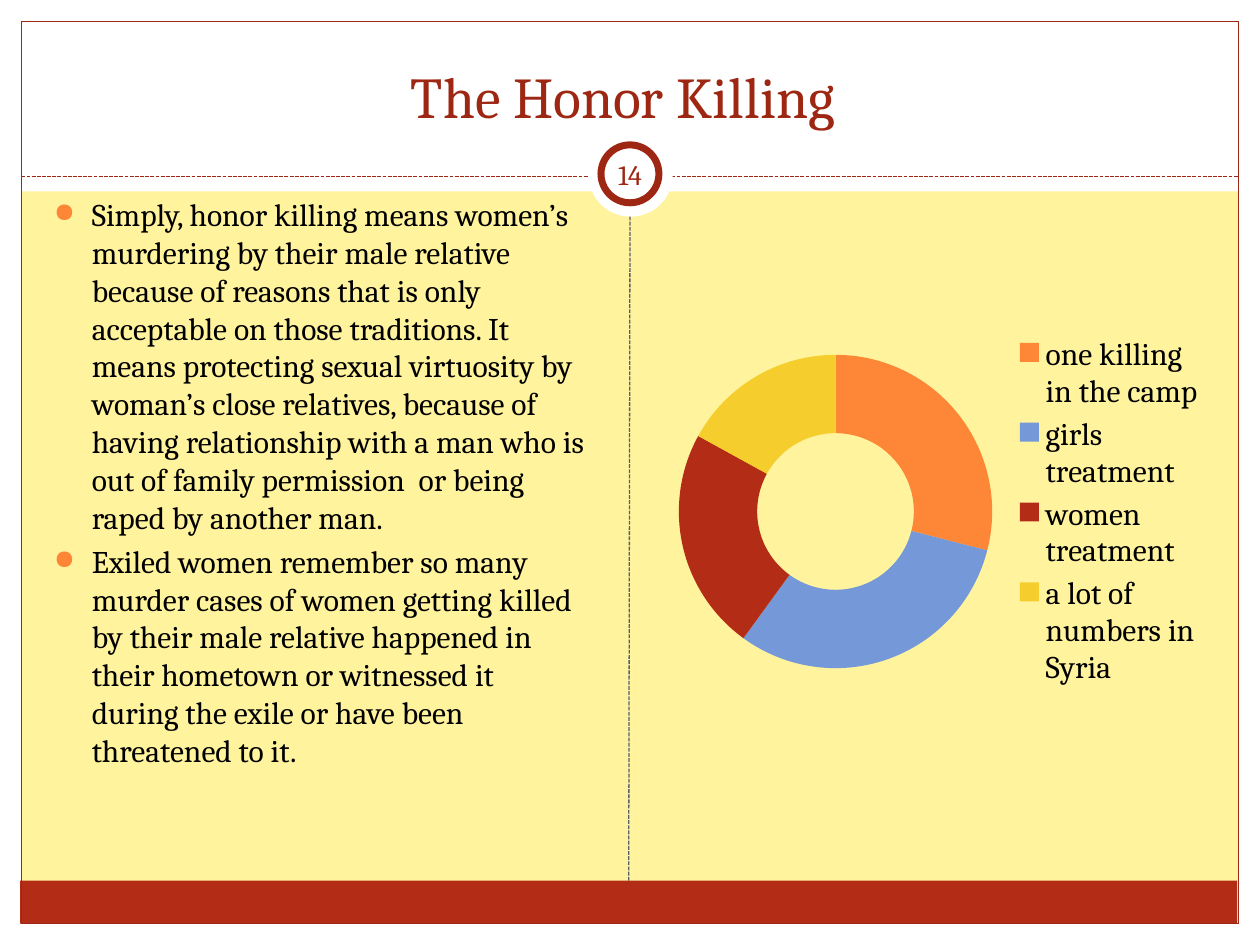
"""Build the slide on honor killing: text on the left, a doughnut chart on the right."""
from lxml.etree import SubElement
from pptx import Presentation
from pptx.chart.data import CategoryChartData
from pptx.dml.color import RGBColor
from pptx.enum.chart import XL_CHART_TYPE, XL_LEGEND_POSITION
from pptx.enum.dml import MSO_LINE
from pptx.enum.shapes import MSO_CONNECTOR, MSO_SHAPE
from pptx.enum.text import MSO_ANCHOR, PP_ALIGN
from pptx.oxml.ns import qn
from pptx.util import Inches, Pt

FONT = "Cambria"
CREAM = RGBColor(0xFF, 0xF3, 0x9D)
WHITE = RGBColor(0xFF, 0xFF, 0xFF)
BLACK = RGBColor(0x00, 0x00, 0x00)
RED = RGBColor(0xB3, 0x2C, 0x16)
DARK_RED = RGBColor(0x9E, 0x27, 0x13)
SLATE = RGBColor(0x57, 0x5F, 0x6D)
ORANGE = RGBColor(0xFE, 0x86, 0x37)
BLUE = RGBColor(0x75, 0x98, 0xD9)
YELLOW = RGBColor(0xF5, 0xCD, 0x2D)

presentation = Presentation()
presentation.slide_width = Inches(10)
presentation.slide_height = Inches(7.5)
slide = presentation.slides.add_slide(presentation.slide_layouts[5])
slide.background.fill.solid()
slide.background.fill.fore_color.rgb = CREAM


def add_panel(preset, left, top, width, height, fill=None, line=None, weight=0.75):
    panel = slide.shapes.add_shape(
        preset, Inches(left), Inches(top), Inches(width), Inches(height))
    panel.shadow.inherit = False
    if fill is None:
        panel.fill.background()
    else:
        panel.fill.solid()
        panel.fill.fore_color.rgb = fill
    if line is None:
        panel.line.fill.background()
    else:
        panel.line.color.rgb = line
        panel.line.width = Pt(weight)
    return panel


def write(holder, paragraphs, size, color, align=PP_ALIGN.LEFT,
          anchor=MSO_ANCHOR.TOP, inset=0.1, bullet=None):
    frame = holder.text_frame
    frame.word_wrap = True
    frame.vertical_anchor = anchor
    frame.margin_left = frame.margin_right = Inches(inset)
    frame.margin_top = frame.margin_bottom = Inches(0.05)
    frame.text = "\n".join(paragraphs)
    for paragraph in frame.paragraphs:
        paragraph.alignment = align
        font = paragraph.runs[0].font
        font.name, font.size, font.color.rgb = FONT, Pt(size), color
        if bullet is not None:
            paragraph.space_before = Pt(size * 0.2)
            properties = paragraph._p.get_or_add_pPr()
            properties.set("marL", str(Inches(0.3)))
            properties.set("indent", str(-Inches(0.3)))
            bullet_color = SubElement(properties, qn("a:buClr"))
            SubElement(bullet_color, qn("a:srgbClr"), val=str(bullet))
            SubElement(properties, qn("a:buSzPct"), val="85000")
            SubElement(properties, qn("a:buChar"), char="●")


for edge in [(0, 7.33, 10, 0.17), (0, 0, 10, 1.52), (0, 0, 0.17, 7.5), (9.83, 0, 0.17, 7.5)]:
    add_panel(MSO_SHAPE.RECTANGLE, *edge, fill=WHITE)
footer_bar = add_panel(MSO_SHAPE.RECTANGLE, 0.16, 6.99, 9.66, 0.34, fill=RED)
add_panel(MSO_SHAPE.RECTANGLE, 0.17, 0.17, 9.66, 7.16, line=DARK_RED)

title_rule = slide.shapes.add_connector(
    MSO_CONNECTOR.STRAIGHT, Inches(0.17), Inches(1.4), Inches(9.83), Inches(1.4))
add_panel(MSO_SHAPE.OVAL, 4.67, 1.05, 0.67, 0.67, fill=WHITE)
add_panel(MSO_SHAPE.OVAL, 4.77, 1.15, 0.46, 0.46, fill=WHITE, line=DARK_RED, weight=4)
column_rule = slide.shapes.add_connector(
    MSO_CONNECTOR.STRAIGHT, Inches(4.99), Inches(6.99), Inches(5), Inches(1.72))
column_rule.begin_connect(footer_bar, 0)
for rule, color in [(title_rule, DARK_RED), (column_rule, SLATE)]:
    rule.line.color.rgb = color
    rule.line.width = Pt(0.75)
    rule.line.dash_style = MSO_LINE.SQUARE_DOT
    SubElement(rule._element.spPr, qn("a:effectLst"))

title = slide.shapes.title
title.left, title.top = Inches(0.33), Inches(0.25)
title.width, title.height = Inches(9.33), Inches(0.83)
slide.shapes._spTree.append(title._element)
write(title, ["The Honor Killing "], size=33, color=DARK_RED,
      align=PP_ALIGN.CENTER, anchor=MSO_ANCHOR.BOTTOM)

explanation = slide.shapes.add_textbox(Inches(0.33), Inches(1.5), Inches(4.42), Inches(5.12))
write(explanation, [
    "Simply, honor killing means women’s murdering by their male relative because of "
    "reasons that is only acceptable on those traditions. It means protecting sexual "
    "virtuosity by woman’s close relatives, because of having relationship with a man "
    "who is out of family permission  or being raped by another man.",
    "Exiled women remember so many murder cases of women getting killed by their male "
    "relative happened in their hometown or witnessed it during the exile or have been "
    "threatened to it.",
], size=18, color=BLACK, bullet=ORANGE)

answers = CategoryChartData()
answers.categories = ["one killing in the camp", "girls treatment",
                      "women treatment", "a lot of numbers in Syria"]
answers.add_series("Series 1", [29, 31, 23, 17])
doughnut = slide.shapes.add_chart(
    XL_CHART_TYPE.DOUGHNUT, Inches(5.25), Inches(1.5), Inches(4.42), Inches(5.12), answers).chart
doughnut.has_title = False
doughnut.font.name, doughnut.font.size, doughnut.font.color.rgb = FONT, Pt(18), BLACK
doughnut.has_legend = True
doughnut.legend.position = XL_LEGEND_POSITION.RIGHT
doughnut.legend.include_in_layout = False
ring = doughnut.plots[0]
ring.vary_by_categories = True
ring._element.find(qn("c:holeSize")).set("val", "50")
for index, color in enumerate([ORANGE, BLUE, RED, YELLOW]):
    slice_fill = ring.series[0].points[index].format.fill
    slice_fill.solid()
    slice_fill.fore_color.rgb = color

page_number = slide.shapes.add_textbox(Inches(4.75), Inches(1.14), Inches(0.5), Inches(0.48))
write(page_number, ["14"], size=16, color=DARK_RED,
      align=PP_ALIGN.CENTER, anchor=MSO_ANCHOR.MIDDLE, inset=0.05)

presentation.save("out.pptx")
